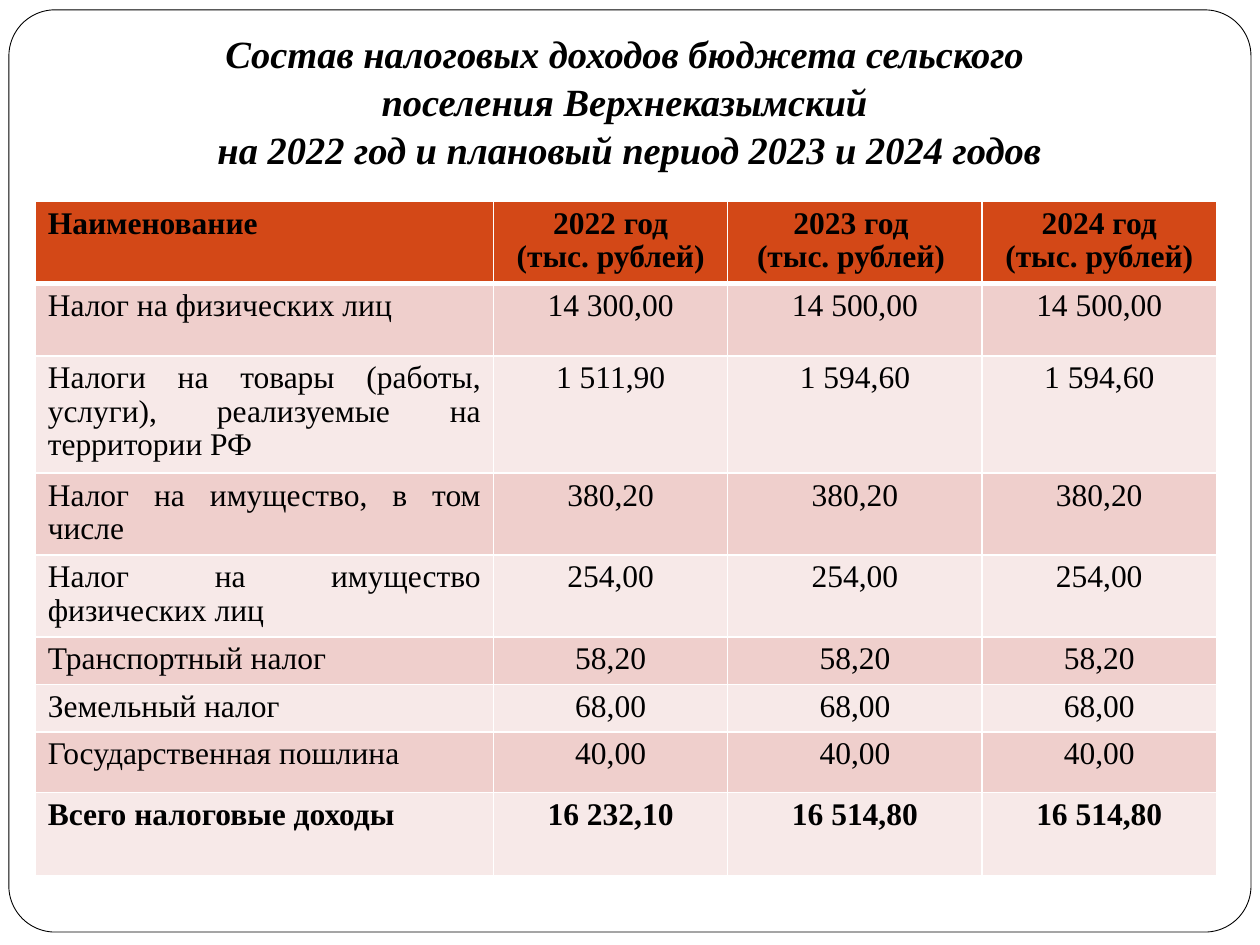
from copy import deepcopy

from lxml.etree import SubElement
from pptx import Presentation
from pptx.dml.color import RGBColor
from pptx.enum.shapes import MSO_SHAPE as SHAPE
from pptx.enum.text import MSO_ANCHOR as ANCHOR, MSO_AUTO_SIZE as AUTO_SIZE, PP_ALIGN as ALIGN
from pptx.oxml.ns import qn
from pptx.util import Cm, Pt

FONT = "Times New Roman"
BLACK = RGBColor(0x00, 0x00, 0x00)
WHITE = RGBColor(0xFF, 0xFF, 0xFF)
HEADER = RGBColor(0xD3, 0x48, 0x17)
BANDS = [RGBColor(0xF7, 0xE9, 0xE8), RGBColor(0xEF, 0xCF, 0xCC)]

COL_WIDTHS = [9.24, 4.72, 5.13, 4.72]
ROWS = [
    (1.65, "Наименование", "2022 год\n (тыс. рублей) ", "2023 год \n(тыс. рублей) ",
     "2024 год\n (тыс. рублей) "),
    (1.47, "Налог на физических лиц ", "14 300,00", "14 500,00", "14 500,00"),
    (2.36, "Налоги на товары (работы, услуги), реализуемые на территории РФ",
     "1 511,90", "1 594,60", "1 594,60"),
    (1.65, "Налог на имущество, в том числе ", "380,20", "380,20", "380,20"),
    (1.65, "Налог на имущество физических лиц", "254,00", "254,00", "254,00"),
    (0.96, "Транспортный налог", "58,20", "58,20", "58,20"),
    (0.96, "Земельный налог ", "68,00", "68,00", "68,00"),
    (1.22, "Государственная пошлина ", "40,00", "40,00", "40,00"),
    (1.67, "Всего налоговые доходы ", "16 232,10", "16 514,80", "16 514,80"),
]


def format_run(r, size, bold, italic=False):
    r.font.name = FONT
    r.font.size = Pt(size)
    r.font.bold = bold
    r.font.italic = italic
    r.font.color.rgb = BLACK


def add_borders(cell, bottom):
    """Draw white cell borders, 1 pt except for the given bottom width."""
    tc_pr = cell._tc.get_or_add_tcPr()
    for tag, width in (("lnL", 1), ("lnR", 1), ("lnT", 1), ("lnB", bottom)):
        ln = SubElement(tc_pr, qn(f"a:{tag}"), w=str(Pt(width)))
        fill = SubElement(ln, qn("a:solidFill"))
        SubElement(fill, qn("a:srgbClr"), val=str(WHITE))


prs = Presentation()
prs.slide_width, prs.slide_height = Cm(25.4), Cm(19.05)
s = prs.slides.add_slide(prs.slide_layouts[5])

# Rounded frame, behind everything else
frame = s.shapes.add_shape(SHAPE.ROUNDED_RECTANGLE, Cm(0.18), Cm(0.2), Cm(25.04), Cm(18.59))
frame.adjustments[0] = 0.05
frame.shadow.inherit = False
frame.fill.solid()
frame.fill.fore_color.rgb = WHITE
frame.line.color.rgb = BLACK
frame.line.width = Pt(0.5)
s.shapes._spTree.insert(2, frame._element)

# Title
title = s.shapes.title
title.left, title.top, title.width, title.height = Cm(1.27), Cm(0.53), Cm(22.83), Cm(3.2)
tf = title.text_frame
tf.text = ("Состав налоговых доходов бюджета сельского \v"
           "поселения Верхнеказымский \v"
           "на 2022 год и плановый период 2023 и 2024 годов")
tf.word_wrap = True
tf.auto_size = AUTO_SIZE.NONE
tf.vertical_anchor = ANCHOR.BOTTOM
tf.margin_bottom = Cm(0.25)
p = tf.paragraphs[0]
p.alignment = ALIGN.CENTER
p.line_spacing = 1.04
for r in p.runs:
    format_run(r, 22, bold=True, italic=True)
for br in p._p.findall(qn("a:br")):
    br.append(deepcopy(p.runs[0]._r.rPr))

# Tax revenue table
table = s.shapes.add_table(len(ROWS), len(COL_WIDTHS), Cm(0.71), Cm(4.06),
                           Cm(sum(COL_WIDTHS)), Cm(sum(row[0] for row in ROWS))).table
for column, width in zip(table.columns, COL_WIDTHS):
    column.width = Cm(width)

last = len(ROWS) - 1
for i, (height, *texts) in enumerate(ROWS):
    table.rows[i].height = Cm(height)
    for j, text in enumerate(texts):
        cell = table.cell(i, j)
        add_borders(cell, bottom=3 if i == 0 else 1)
        cell.fill.solid()
        cell.fill.fore_color.rgb = HEADER if i == 0 else BANDS[i % 2]
        cell.text_frame.text = text
        for p in cell.text_frame.paragraphs:
            if j > 0:
                p.alignment = ALIGN.CENTER
            else:
                p.alignment = ALIGN.LEFT if i == 0 else ALIGN.JUSTIFY
            p.line_spacing = 0.95
            for r in p.runs:
                format_run(r, 18, bold=i in (0, last))

prs.save("out.pptx")
